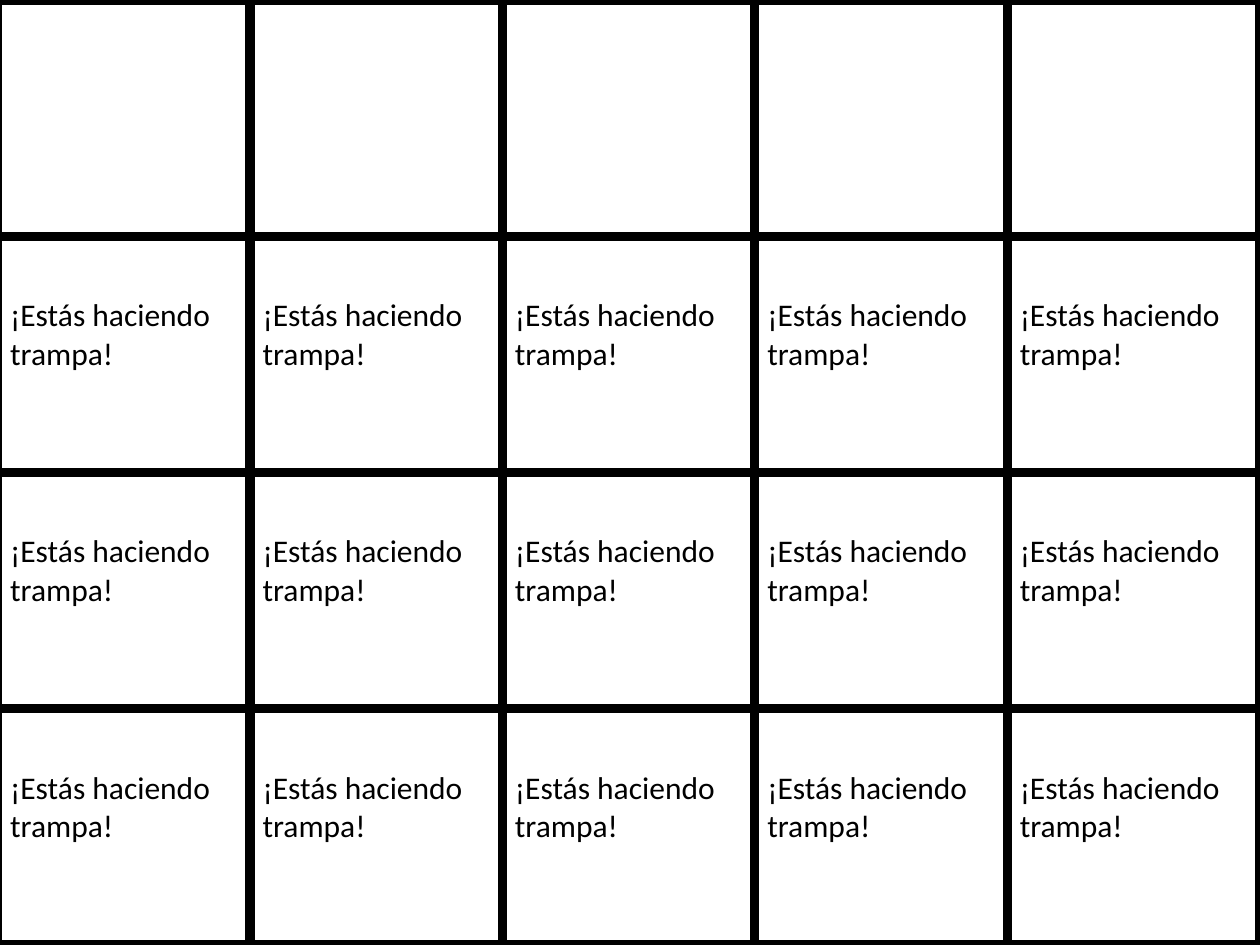
from dataclasses import dataclass

from lxml import etree
from pptx import Presentation
from pptx.dml.color import RGBColor
from pptx.enum.text import MSO_ANCHOR
from pptx.oxml.ns import qn
from pptx.util import Pt

MIDDLE = MSO_ANCHOR.MIDDLE
WIDE, HIGH = 720, 540
ROWS, COLS = 4, 5
LEFT, SPAN = -1.4, 721.2
LABEL = "¡Estás haciendo trampa!"


@dataclass(frozen=True)
class Theme:
    ink: str = "000000"
    font: str = "Calibri"
    size: float = 18
    rule: float = 6
    lift: float = 25.6


class Deck:
    """Hold the theme and the slide, and draw elements on it."""

    def __init__(self, theme):
        self.theme = theme
        self.file = Presentation()
        self.file.slide_width, self.file.slide_height = Pt(WIDE), Pt(HIGH)
        self.slide = self.file.slides.add_slide(self.file.slide_layouts[6])

    def style(self, item, values):
        for name, value in values.items():
            setattr(item, name, value)

    def border(self, cell):
        props = cell._tc.get_or_add_tcPr()
        for index, side in enumerate(("lnL", "lnR", "lnT", "lnB")):
            line = etree.Element(qn(f"a:{side}"), w=str(Pt(self.theme.rule)))
            fill = etree.SubElement(line, qn("a:solidFill"))
            etree.SubElement(fill, qn("a:srgbClr"), val=self.theme.ink)
            props.insert(index, line)

    def label(self, cell, text):
        self.style(cell, {"vertical_anchor": MIDDLE,
                          "margin_bottom": Pt(self.theme.lift)})
        run = cell.text_frame.paragraphs[0].add_run()
        run.text = text
        self.style(run.font, {"name": self.theme.font,
                              "size": Pt(self.theme.size)})
        run.font.color.rgb = RGBColor.from_string(self.theme.ink)

    def grid(self, left, top, width, height, rows):
        frame = self.slide.shapes.add_table(
            len(rows), len(rows[0]), Pt(left), Pt(top), Pt(width), Pt(height))
        table = frame.table
        self.style(table, {"first_row": False, "horz_banding": False})
        for row, texts in enumerate(rows):
            for col, text in enumerate(texts):
                cell = table.cell(row, col)
                cell.fill.background()
                self.border(cell)
                if text:
                    self.label(cell, text)


def main():
    deck = Deck(Theme())
    rows = [[""] * COLS] + [[LABEL] * COLS] * (ROWS - 1)
    deck.grid(LEFT, 0, SPAN, HIGH, rows)
    deck.file.save("out.pptx")


if __name__ == "__main__":
    main()
